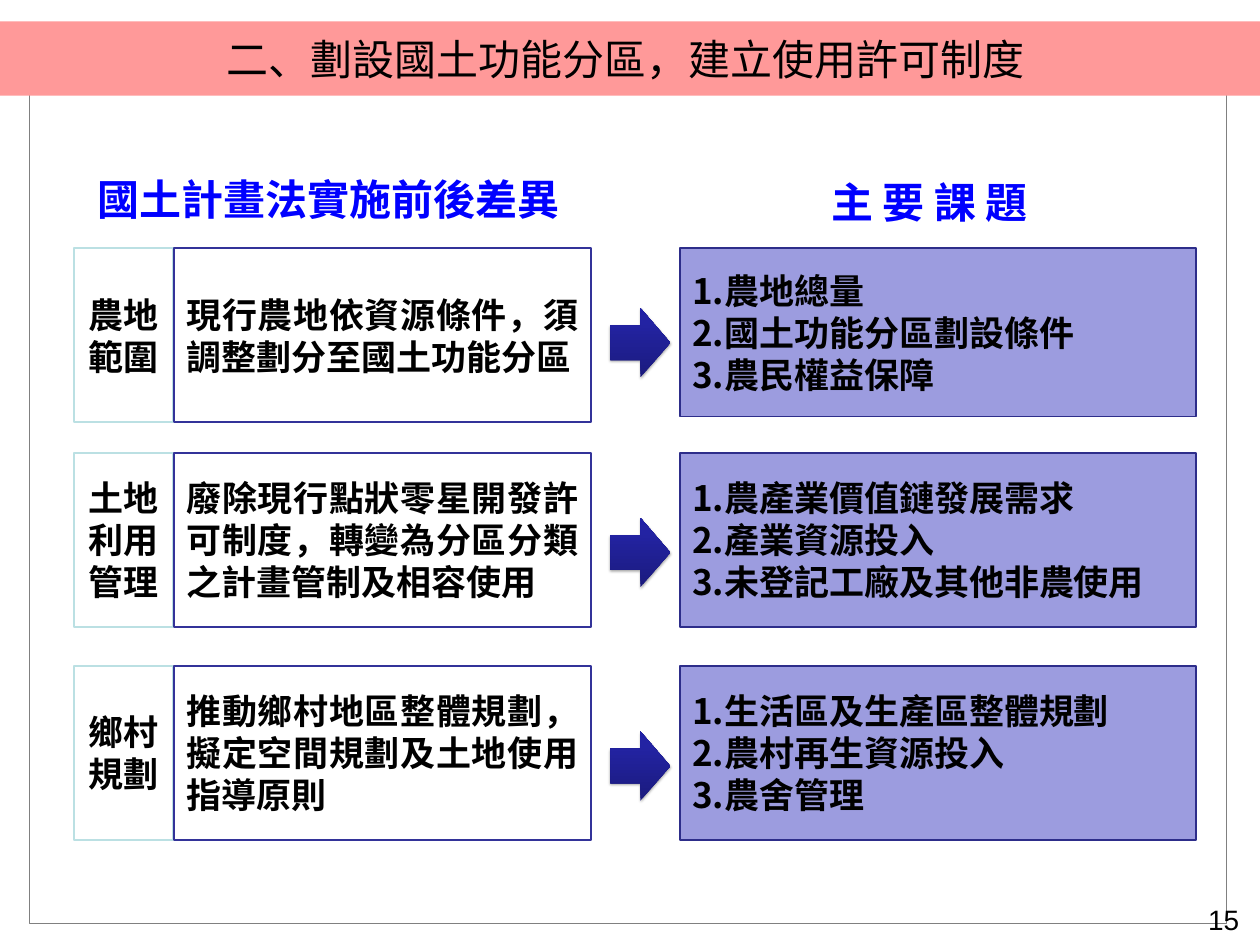
from lxml import etree
from pptx import Presentation
from pptx import util as u
from pptx.dml.color import RGBColor
from pptx.enum import shapes, text
from pptx.oxml import parse_xml
from pptx.oxml.ns import nsdecls, qn

TITLE = "二、劃設國土功能分區，建立使用許可制度 "
PAGE_NUMBER = "15"
HEADINGS = [
    ("國土計畫法實施前後差異", (1.31, 2.66, 7.81, 1.01)),
    ("主 要 課 題", (12.93, 2.7, 3.65, 1.01)),
]
ROWS = [
    {"topic": "農地範圍",
     "change": "現行農地依資源條件，須調整劃分至國土功能分區",
     "issues": ["1.農地總量", "2.國土功能分區劃設條件", "3.農民權益保障"],
     "top": 3.94, "issue_height": 2.67, "arrow_offset": 0.95, "hanging": 0},
    {"topic": "土地利用管理",
     "change": "廢除現行點狀零星開發許可制度，轉變為分區分類之計畫管制及相容使用",
     "issues": ["1.農產業價值鏈發展需求", "2.產業資源投入", "3.未登記工廠及其他非農使用"],
     "top": 7.19, "issue_height": 2.76, "arrow_offset": 1.03, "hanging": 0},
    {"topic": "鄉村規劃",
     "change": "推動鄉村地區整體規劃，擬定空間規劃及土地使用指導原則",
     "issues": ["1.生活區及生產區整體規劃", "2.農村再生資源投入", "3.農舍管理"],
     "top": 10.57, "issue_height": 2.76, "arrow_offset": 1.04, "hanging": 0.58},
]
COLUMNS = {"topic": (1.18, 1.57), "change": (2.76, 6.62),
           "arrow": (9.69, 0.95), "issues": (10.79, 8.19)}
ROW_HEIGHT, ARROW_HEIGHT = 2.76, 1.1
COLORS = {"white": "FFFFFF", "black": "000000", "frame": "808080", "banner": "FF9999",
          "topic": "BBE0E3", "change": "333399", "issue": "9C9CDF", "issue_line": "2D2D8A",
          "heading": "0000FF", "heading_line": "AFD5D9"}
ARROW_STOPS = [(0, "1B1B7E"), (80, "2323A3"), (100, "2020A6")]
CJK, LATIN = "Noto Sans CJK SC", "Arial"
CENTER, JUSTIFY, RIGHT = (text.PP_ALIGN.CENTER, text.PP_ALIGN.JUSTIFY, text.PP_ALIGN.RIGHT)


def rgb(name):
    return RGBColor.from_string(COLORS[name])


def write(shape, lines, size, align, color="black", font=CJK, bold=True,
          insets=(0.2, 0.1), anchor=text.MSO_ANCHOR.MIDDLE, hanging=0, wrap=True):
    frame = shape.text_frame
    frame.text = "\n".join(lines)
    frame.word_wrap = wrap
    frame.auto_size = text.MSO_AUTO_SIZE.NONE
    frame.vertical_anchor = anchor
    frame.margin_left = frame.margin_right = u.Inches(insets[0])
    frame.margin_top = frame.margin_bottom = u.Inches(insets[1])
    for paragraph in frame.paragraphs:
        paragraph.alignment = align
        paragraph.font.size = u.Pt(size)
        paragraph.font.bold = bold
        paragraph.font.name = font
        paragraph.font.color.rgb = rgb(color)
        properties = paragraph._p.get_or_add_pPr()
        east_asian = etree.SubElement(properties.find(qn("a:defRPr")), qn("a:ea"))
        east_asian.set("typeface", font)
        if hanging:
            properties.set("marL", str(u.Inches(hanging)))
            properties.set("indent", str(-u.Inches(hanging)))


def add_box(slide, box, fill=None, line=None, width=2, kind=shapes.MSO_SHAPE.RECTANGLE):
    shape = slide.shapes.add_shape(kind, *map(u.Inches, box))
    shape.shadow.inherit = False
    if fill:
        shape.fill.solid()
        shape.fill.fore_color.rgb = rgb(fill)
    else:
        shape.fill.background()
    if line:
        shape.line.color.rgb = rgb(line)
        shape.line.width = u.Pt(width)
    else:
        shape.line.fill.background()
    return shape


def add_arrow(slide, box):
    arrow = add_box(slide, box, kind=shapes.MSO_SHAPE.RIGHT_ARROW)
    stops = "".join(f'<a:gs pos="{place * 1000}"><a:srgbClr val="{color}"/></a:gs>'
                    for place, color in ARROW_STOPS)
    properties = arrow.element.spPr
    properties.replace(properties.find(qn("a:noFill")), parse_xml(
        f'<a:gradFill {nsdecls("a")}><a:gsLst>{stops}</a:gsLst>'
        '<a:lin ang="16200000" scaled="0"/></a:gradFill>'))
    properties.find(qn("a:effectLst")).append(parse_xml(
        f'<a:outerShdw {nsdecls("a")} blurRad="{u.Pt(3.1)}" dist="{u.Pt(1.8)}" '
        f'dir="5400000" rotWithShape="0"><a:srgbClr val="{COLORS["black"]}">'
        '<a:alpha val="35000"/></a:srgbClr></a:outerShdw>'))


def add_heading(slide, heading, box):
    shape = slide.shapes.add_textbox(*map(u.Inches, box))
    write(shape, [heading], 48, CENTER, "heading", anchor=text.MSO_ANCHOR.TOP, wrap=False)
    properties = shape.text_frame.paragraphs[0]._p.pPr.find(qn("a:defRPr"))
    properties.insert(0, parse_xml(
        f'<a:ln {nsdecls("a")} w="{u.Pt(0.83)}"><a:solidFill>'
        f'<a:srgbClr val="{COLORS["heading_line"]}"/></a:solidFill></a:ln>'))


def add_row(slide, row):
    top = row["top"]

    def cell(column, height=ROW_HEIGHT, offset=0):
        left, width = COLUMNS[column]
        return left, top + offset, width, height

    topic = add_box(slide, cell("topic"), "white", "topic")
    write(topic, [row["topic"]], 40, CENTER)
    change = add_box(slide, cell("change"), "white", "change")
    write(change, [row["change"]], 40, JUSTIFY)
    issues = add_box(slide, cell("issues", row["issue_height"]), "issue", "issue_line")
    write(issues, row["issues"], 40, JUSTIFY, hanging=row["hanging"])
    add_arrow(slide, cell("arrow", ARROW_HEIGHT, row["arrow_offset"]))


def main():
    presentation = Presentation()
    presentation.slide_width, presentation.slide_height = u.Inches(20), u.Inches(15)
    slide = presentation.slides.add_slide(presentation.slide_layouts.get_by_name("Title Only"))
    add_box(slide, (0.46, 0.41, 19, 14.24), line="frame", width=0.75)
    for row in ROWS:
        add_row(slide, row)
    for heading, box in HEADINGS:
        add_heading(slide, heading, box)
    number = slide.shapes.add_textbox(*map(u.Inches, (13.94, 14.27, 5.83, 0.73)))
    write(number, [PAGE_NUMBER], 32, RIGHT, font=LATIN, bold=False,
          insets=(0.1, 0.05), anchor=text.MSO_ANCHOR.TOP)

    title = slide.shapes.title
    title.left, title.top, title.width, title.height = map(u.Inches, (0, 0.34, 20, 1.18))
    title.fill.solid()
    title.fill.fore_color.rgb = rgb("banner")
    write(title, [TITLE], 48, CENTER, bold=False)
    slide.shapes.element.append(title.element)
    presentation.save("out.pptx")


if __name__ == "__main__":
    main()
